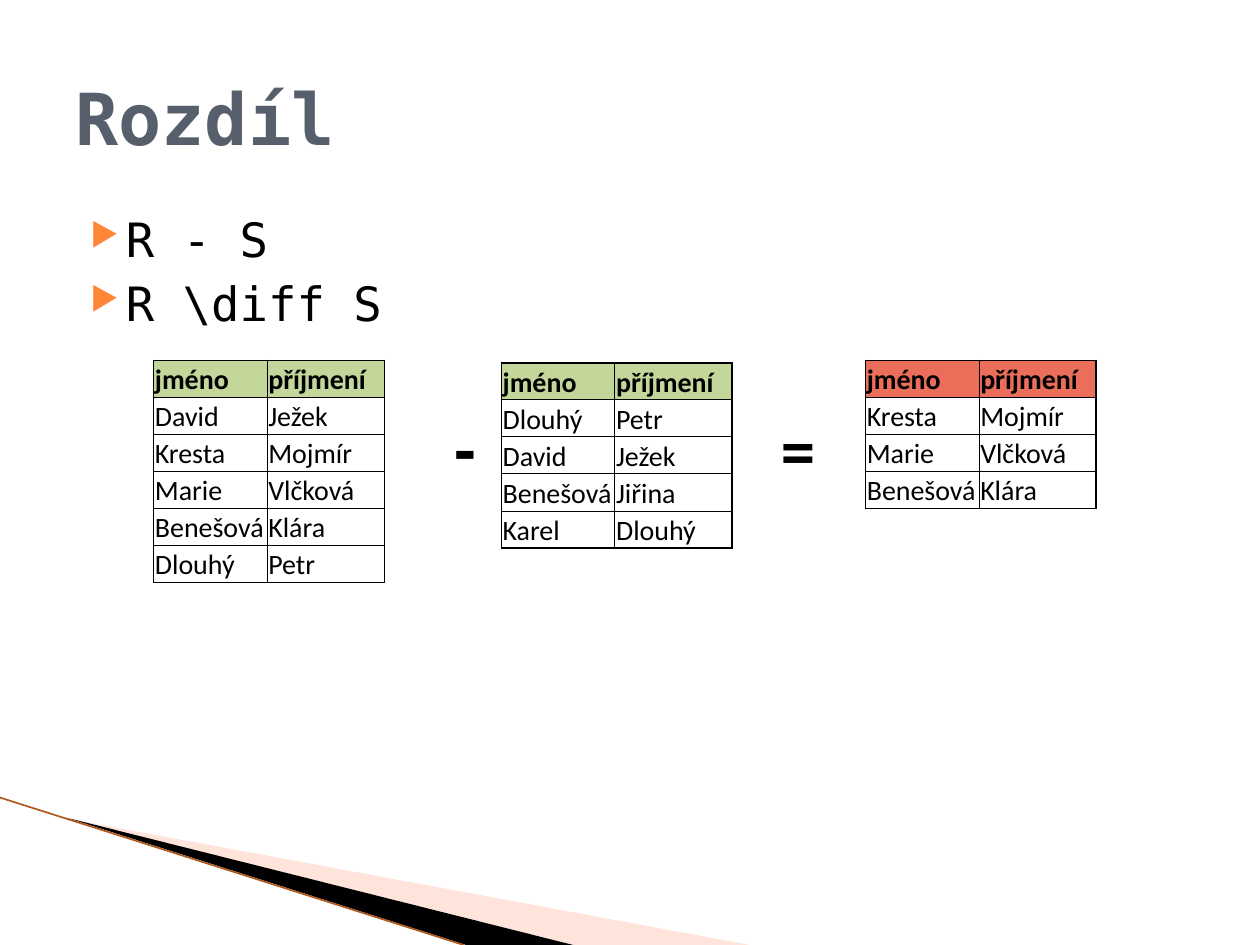
from dataclasses import dataclass

from lxml.etree import SubElement
from pptx import Presentation
from pptx.dml.color import RGBColor
from pptx.enum.shapes import MSO_CONNECTOR
from pptx.enum.text import MSO_ANCHOR
from pptx.oxml import parse_xml
from pptx.oxml.ns import nsdecls, qn
from pptx.util import Inches, Pt


@dataclass(frozen=True)
class Theme:
    ink: str = "000000"
    title: str = "575F6D"
    bullet: str = "FE8637"
    source: str = "C4D79B"
    result: str = "EB6E5A"
    wedge: str = "FFBCA5"
    edge: str = "B0581E"
    mono: str = "DejaVu Sans Mono"
    sans: str = "Calibri"
    title_size: float = 41
    body_size: float = 27
    sign_size: float = 32
    cell_size: float = 16


def grid(n):
    """Length of n grid units; the slide is 100 columns by 75 rows."""
    return Inches(n * 0.1)


def rgb(color):
    return RGBColor.from_string(color)


def write(p, text, *, font, size, color, bold=False):
    r = p.add_run()
    r.text = text
    r.font.name, r.font.size, r.font.bold = font, Pt(size), bold
    r.font.color.rgb = rgb(color)


def set_indent(p, left, first=0):
    pPr = p._p.get_or_add_pPr()
    pPr.set("marL", str(grid(left)))
    pPr.set("indent", str(grid(first)))
    return pPr


def set_borders(cell, color, **widths):
    """Draw the cell's borders; widths are given in the order L, R, T, B."""
    tcPr = cell._tc.get_or_add_tcPr()
    for i, (side, width) in enumerate(widths.items()):
        tcPr.insert(i, parse_xml(
            f'<a:ln{side} {nsdecls("a")} w="{Pt(width)}"><a:solidFill>'
            f'<a:srgbClr val="{color}"/></a:solidFill></a:ln{side}>'))


class SlideBuilder:
    def __init__(self, prs, theme):
        self.theme = theme
        self.s = prs.slides.add_slide(prs.slide_layouts[6])

    def text_frame(self, x, y, w, h, anchor=MSO_ANCHOR.TOP):
        tf = self.s.shapes.add_textbox(*map(grid, (x, y, w, h))).text_frame
        tf.word_wrap = True
        tf.vertical_anchor = anchor
        return tf

    def title(self, text, *box):
        t = self.theme
        tf = self.text_frame(*box, anchor=MSO_ANCHOR.MIDDLE)
        write(tf.paragraphs[0], text, font=t.mono, size=t.title_size,
              color=t.title, bold=True)

    def bullets(self, lines, *box):
        t = self.theme
        tf = self.text_frame(*box)
        for i, line in enumerate(lines):
            p = tf.add_paragraph() if i else tf.paragraphs[0]
            p.space_before = Pt(4 if i else 0)
            pPr = set_indent(p, 4, -2.8)
            color = SubElement(pPr, qn("a:buClr"))
            SubElement(color, qn("a:srgbClr"), val=t.bullet)
            SubElement(pPr, qn("a:buSzPct"), val="68000")
            SubElement(pPr, qn("a:buChar"), char="▶")
            write(p, line, font=t.mono, size=t.body_size, color=t.ink)

    def sign(self, text, x, y, indent=0):
        t = self.theme
        p = self.text_frame(x, y, 7.9, 6.4).paragraphs[0]
        set_indent(p, indent)
        write(p, text, font=t.mono, size=t.sign_size, color=t.ink, bold=True)

    def relation(self, x, y, people, header_fill):
        t = self.theme
        rows = [("jméno", "příjmení"), *people]
        columns = (9, 9.3)
        table = self.s.shapes.add_table(
            len(rows), len(columns), grid(x), grid(y),
            grid(sum(columns)), grid(2.94 * len(rows))).table
        table.first_row = table.horz_banding = False
        for column, width in zip(table.columns, columns):
            column.width = grid(width)
        for i, row in enumerate(rows):
            for j, text in enumerate(row):
                cell = table.cell(i, j)
                cell.margin_left = cell.margin_right = cell.margin_top = grid(0.1)
                cell.margin_bottom = 0
                cell.vertical_anchor = MSO_ANCHOR.BOTTOM
                if i == 0:
                    cell.fill.solid()
                    cell.fill.fore_color.rgb = rgb(header_fill)
                else:
                    cell.fill.background()
                set_borders(cell, t.ink,
                            L=1 if j == 0 else 0.5,
                            R=1 if j == len(columns) - 1 else 0.5,
                            T=1 if i == 0 else 0.5,
                            B=1 if i == len(rows) - 1 else 0.5)
                write(cell.text_frame.paragraphs[0], text, font=t.sans,
                      size=t.cell_size, color=t.ink, bold=i == 0)

    def polygon(self, points, color, opacity=100):
        start, *rest = [(grid(x), grid(y)) for x, y in points]
        builder = self.s.shapes.build_freeform(*start)
        builder.add_line_segments(rest, close=True)
        sp = builder.convert_to_shape()
        sp.shadow.inherit = False
        sp.line.fill.background()
        sp.fill.solid()
        sp.fill.fore_color.rgb = rgb(color)
        if opacity < 100:
            clr = sp._element.spPr.find(f".//{qn('a:srgbClr')}")
            SubElement(clr, qn("a:alpha"), val=str(opacity * 1000))

    def line(self, start, end, color, width):
        cxn = self.s.shapes.add_connector(
            MSO_CONNECTOR.STRAIGHT, *map(grid, (*start, *end)))
        cxn.line.color.rgb = rgb(color)
        cxn.line.width = Pt(width)
        SubElement(cxn._element.spPr, qn("a:effectLst"))


def main():
    prs = Presentation()
    prs.slide_width, prs.slide_height = grid(100), grid(75)
    theme = Theme()
    slide = SlideBuilder(prs, theme)

    slide.polygon([(5.5, 65), (59.5, 75), (45.6, 75)], theme.wedge, opacity=40)
    slide.polygon([(5.3, 64.9), (45.5, 75), (37, 75)], theme.ink)
    slide.line((0, 63.3), (36.8, 75), theme.edge, 0.95)

    slide.title("Rozdíl", 5, 3, 90, 12.5)
    slide.bullets(["R - S", r"R \diff S"], 5, 16.2, 90, 49.5)

    david, petr = ("David", "Ježek"), ("Dlouhý", "Petr")
    remaining = [("Kresta", "Mojmír"), ("Marie", "Vlčková"), ("Benešová", "Klára")]
    slide.relation(12.2, 28.6, [david, *remaining, petr], theme.source)
    slide.sign("-", 31.9, 32.5, indent=2.7)
    slide.relation(39.8, 28.8, [petr, david, ("Benešová", "Jiřina"),
                                ("Karel", "Dlouhý")], theme.source)
    slide.sign("=", 61, 32.5)
    slide.relation(68.7, 28.6, remaining, theme.result)

    prs.save("out.pptx")


if __name__ == "__main__":
    main()
